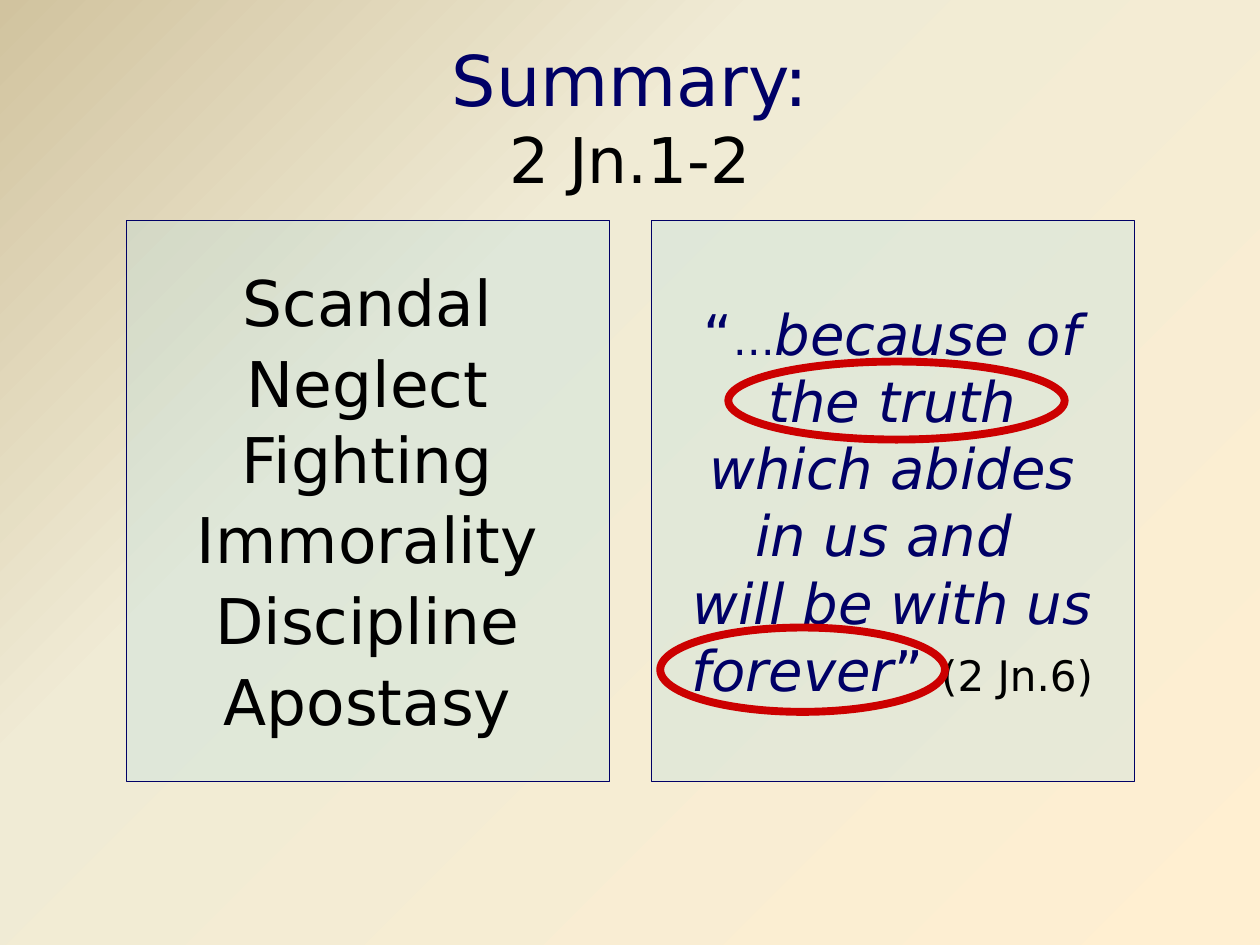
from copy import deepcopy

from lxml.etree import SubElement
from pptx import Presentation
from pptx.dml.color import RGBColor
from pptx.enum.shapes import MSO_SHAPE
from pptx.enum.text import MSO_ANCHOR, MSO_AUTO_SIZE, PP_ALIGN
from pptx.oxml.ns import qn
from pptx.util import Pt

NAVY, BLACK, RED, PALE_TEAL = "000066", "000000", "CC0000", "BBE0E3"
FONT = "DejaVu Sans"
BACKGROUND_STOPS = [(0, "D1C39F"), (0.35, "F0EBD5"), (1, "FFEFD1")]

TITLE = [[("Summary:\n", 40, NAVY, False), ("2 Jn.1-2", 36, BLACK, False)]]
TROUBLES = ["Scandal", "Neglect\nFighting", "Immorality", "Discipline", "Apostasy"]
VERSE = [
    [
        ("“", 32, NAVY, False),
        ("…", 24, NAVY, False),
        ("because of\nthe truth\nwhich abides\nin us and \nwill be with us", 32, NAVY, True),
    ],
    [
        ("forever", 32, NAVY, True),
        ("” ", 32, NAVY, False),
        ("(2 Jn.6)", 24, BLACK, False),
    ],
]
PANEL_TOP, PANEL_WIDTH, PANEL_HEIGHT = 126, 276, 320.4
PANEL_LEFTS = (72, 372)
RINGS = [(416.2, 206.6, 192.2, 44.6), (377.3, 358.6, 162.7, 48.2)]


def color(hex_value):
    """Turn a hex string into a colour."""
    return RGBColor.from_string(hex_value)


def paint_background(slide):
    """Fill the slide with the diagonal sand gradient."""
    fill = slide.background.fill
    fill.gradient()
    fill.gradient_angle = 315
    stop_list = slide.element.find(".//" + qn("a:gsLst"))
    stop_list.append(deepcopy(stop_list[-1]))
    for stop, (position, hex_value) in zip(fill.gradient_stops, BACKGROUND_STOPS):
        stop.position = position
        stop.color.rgb = color(hex_value)


def add_words(paragraph, words, size, hex_value, italic):
    """Add formatted words, breaking the line at each newline."""
    for index, line in enumerate(words.split("\n")):
        if index:
            paragraph.add_line_break()
            paragraph._p[-1].append(deepcopy(run._r.rPr))
        if line:
            run = paragraph.add_run()
            run.text = line
            font_format = {"name": FONT, "size": Pt(size), "italic": italic}
            for attribute, value in font_format.items():
                setattr(run.font, attribute, value)
            run.font.color.rgb = color(hex_value)


def write_text(frame, paragraphs, gap=0):
    """Write centred paragraphs with a gap between them."""
    frame_format = {
        "word_wrap": True,
        "auto_size": MSO_AUTO_SIZE.NONE,
        "vertical_anchor": MSO_ANCHOR.MIDDLE,
    }
    for attribute, value in frame_format.items():
        setattr(frame, attribute, value)
    for index, pieces in enumerate(paragraphs):
        paragraph = frame.add_paragraph() if index else frame.paragraphs[0]
        paragraph.alignment = PP_ALIGN.CENTER
        paragraph.space_before = Pt(0)
        paragraph.space_after = Pt(gap if index < len(paragraphs) - 1 else 0)
        for piece in pieces:
            add_words(paragraph, *piece)


def add_outlined(slide, preset, box, hex_value, weight):
    """Add a shape with a plain outline."""
    shape = slide.shapes.add_shape(preset, *map(Pt, box))
    shape.shadow.inherit = False
    shape.line.color.rgb = color(hex_value)
    shape.line.width = Pt(weight)
    return shape


def add_panel(slide, left, paragraphs, gap=0):
    """Add a translucent panel of text."""
    box = (left, PANEL_TOP, PANEL_WIDTH, PANEL_HEIGHT)
    panel = add_outlined(slide, MSO_SHAPE.RECTANGLE, box, NAVY, 0.25)
    panel.fill.solid()
    panel.fill.fore_color.rgb = color(PALE_TEAL)
    tint = panel._element.spPr.find(qn("a:solidFill"))[0]
    SubElement(tint, qn("a:alpha"), val="31000")
    write_text(panel.text_frame, paragraphs, gap)


def add_ring(slide, box):
    """Add a red ring around key words."""
    add_outlined(slide, MSO_SHAPE.OVAL, box, RED, 4.5).fill.background()


def add_title(slide):
    """Place and write the title."""
    title = slide.shapes.title
    place = {"left": 36, "top": 21.6, "width": 648, "height": 90}
    for attribute, value in place.items():
        setattr(title, attribute, Pt(value))
    write_text(title.text_frame, TITLE)


def main():
    """Build and save the summary slide."""
    presentation = Presentation()
    presentation.slide_width, presentation.slide_height = Pt(720), Pt(540)
    slide = presentation.slides.add_slide(presentation.slide_layouts[5])
    paint_background(slide)
    add_title(slide)
    troubles = [[(trouble, 36, BLACK, False)] for trouble in TROUBLES]
    add_panel(slide, PANEL_LEFTS[0], troubles, gap=3)
    add_panel(slide, PANEL_LEFTS[1], VERSE)
    for box in RINGS:
        add_ring(slide, box)
    presentation.save("out.pptx")


if __name__ == "__main__":
    main()
